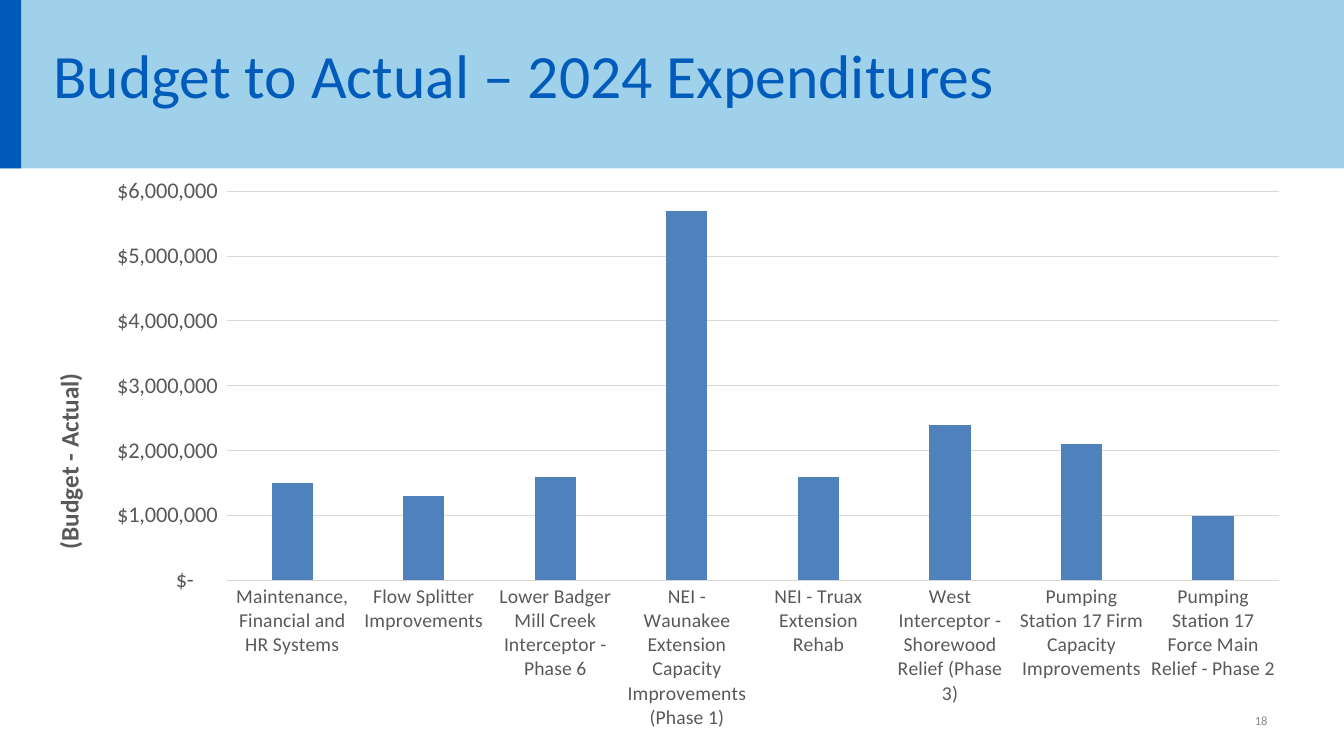
from dataclasses import dataclass

from lxml.etree import SubElement
from pptx import Presentation
from pptx.chart.data import CategoryChartData
from pptx.dml.color import RGBColor
from pptx.enum.chart import XL_CHART_TYPE, XL_TICK_MARK
from pptx.enum.text import MSO_ANCHOR, PP_ALIGN
from pptx.oxml import parse_xml
from pptx.oxml.ns import nsdecls, qn
from pptx.util import Inches, Pt


@dataclass(frozen=True)
class Theme:
    font: str = "Calibri"
    sky: str = "8FCAE7"
    blue: str = "005BBB"
    bar: str = "4F81BD"
    ink: str = "595959"
    grid: str = "D9D9D9"
    gray: str = "8C8C8C"
    title: int = 44
    axis: int = 18
    value: int = 16
    label: int = 14
    page: int = 9


@dataclass(frozen=True)
class Box:
    left: float
    top: float
    width: float
    height: float

    def place(self) -> tuple:
        return tuple(map(Inches, (self.left, self.top, self.width, self.height)))


@dataclass(frozen=True)
class Band:
    box: Box
    color: str
    alpha: int = 100


@dataclass(frozen=True)
class Gap:
    name: str
    value: int


THEME = Theme()
BANDS = [
    Band(Box(0, 0, 13.33, 1.67), THEME.sky, 85),
    Band(Box(0, 0, 0.21, 1.67), THEME.blue),
]
GAPS = [
    Gap("Maintenance, Financial and HR Systems", 1500000),
    Gap("Flow Splitter Improvements", 1300000),
    Gap("Lower Badger Mill Creek Interceptor - Phase 6", 1600000),
    Gap("NEI - Waunakee Extension Capacity Improvements (Phase 1)", 5700000),
    Gap("NEI - Truax Extension Rehab", 1600000),
    Gap("West Interceptor - Shorewood Relief (Phase 3)", 2400000),
    Gap("Pumping Station 17 Firm Capacity Improvements", 2100000),
    Gap("Pumping Station 17 Force Main Relief - Phase 2", 1000000),
]
MONEY = r'_("$"* #,##0_);_("$"* \(#,##0\);_("$"* "-"??_);_(@_)'


def style(font, size: int, color: str, bold: bool = False) -> None:
    font.name = THEME.font
    font.size = Pt(size)
    font.bold = bold
    font.color.rgb = RGBColor.from_string(color)


def write(frame, text: str, *, size: int, color: str, bold: bool = False,
          align=PP_ALIGN.LEFT, anchor=MSO_ANCHOR.TOP) -> None:
    frame.word_wrap = True
    frame.vertical_anchor = anchor
    line = frame.paragraphs[0]
    line.alignment = align
    run = line.add_run()
    run.text = text
    style(run.font, size, color, bold)


def draw(slide, band: Band) -> None:
    shape = slide.shapes.add_shape(1, *band.box.place())
    shape.shadow.inherit = False
    shape.fill.solid()
    shape.fill.fore_color.rgb = RGBColor.from_string(band.color)
    shape.line.fill.background()
    if band.alpha < 100:
        tone = shape.fill._xPr.find(f".//{qn('a:srgbClr')}")
        SubElement(tone, qn("a:alpha")).set("val", str(band.alpha * 1000))


def layout(**parts: object):
    body = "".join(f'<c:{key} val="{val}"/>' for key, val in parts.items())
    return parse_xml(f"<c:layout {nsdecls('c')}><c:manualLayout>{body}"
                     "</c:manualLayout></c:layout>")


def settle(host, place, spot: int) -> None:
    for old in host.findall(qn("c:layout")):
        host.remove(old)
    host.insert(spot, place)


def plot(slide, box: Box) -> None:
    data = CategoryChartData(number_format="General")
    data.categories = [gap.name for gap in GAPS]
    data.add_series("Series 1", [gap.value for gap in GAPS])
    chart = slide.shapes.add_chart(
        XL_CHART_TYPE.COLUMN_CLUSTERED, *box.place(), data).chart
    chart.has_legend = False
    chart.has_title = False
    style(chart.font, 10, "000000")

    bars = chart.plots[0]
    bars.gap_width = 219
    bars.overlap = -27
    bars.vary_by_categories = False
    fill = bars.series[0].format.fill
    fill.solid()
    fill.fore_color.rgb = RGBColor.from_string(THEME.bar)

    names, money = chart.category_axis, chart.value_axis
    for axis, size in ((names, THEME.label), (money, THEME.value)):
        axis.major_tick_mark = axis.minor_tick_mark = XL_TICK_MARK.NONE
        style(axis.tick_labels.font, size, THEME.ink)
    money.minimum_scale, money.maximum_scale = 0, 6000000
    money.major_unit = 1000000
    money.tick_labels.number_format = MONEY
    money.tick_labels.number_format_is_linked = False
    money.format.line.fill.background()
    for line in (names.format.line, money.major_gridlines.format.line):
        line.color.rgb = RGBColor.from_string(THEME.grid)
        line.width = Pt(0.75)

    title = money.axis_title
    write(title.text_frame, "(Budget - Actual)", size=THEME.axis,
          color=THEME.ink, bold=True, align=PP_ALIGN.CENTER)
    turn = title.element.find(f".//{qn('a:bodyPr')}")
    turn.set("rot", "-5400000")
    turn.set("vert", "horz")
    settle(title.element, layout(xMode="edge", yMode="edge", x=0.02, y=0.35), 1)
    area = chart.element.find(f".//{qn('c:plotArea')}")
    settle(area, layout(layoutTarget="inner", xMode="edge", yMode="edge",
                        x=0.16, y=0.04, w=0.82, h=0.68), 0)


def main() -> None:
    deck = Presentation()
    deck.slide_width, deck.slide_height = Inches(13.33), Inches(7.5)
    slide = deck.slides.add_slide(deck.slide_layouts[6])
    for band in BANDS:
        draw(slide, band)
    title = slide.shapes.add_textbox(*Box(0.43, 0.32, 9.56, 0.85).place())
    write(title.text_frame, "Budget to Actual – 2024 Expenditures",
          size=THEME.title, color=THEME.blue)
    page = slide.shapes.add_textbox(*Box(9.56, 6.95, 3.11, 0.4).place())
    write(page.text_frame, "18", size=THEME.page, color=THEME.gray,
          align=PP_ALIGN.RIGHT, anchor=MSO_ANCHOR.MIDDLE)
    plot(slide, Box(0.21, 1.67, 12.73, 5.68))
    deck.save("out.pptx")


if __name__ == "__main__":
    main()
